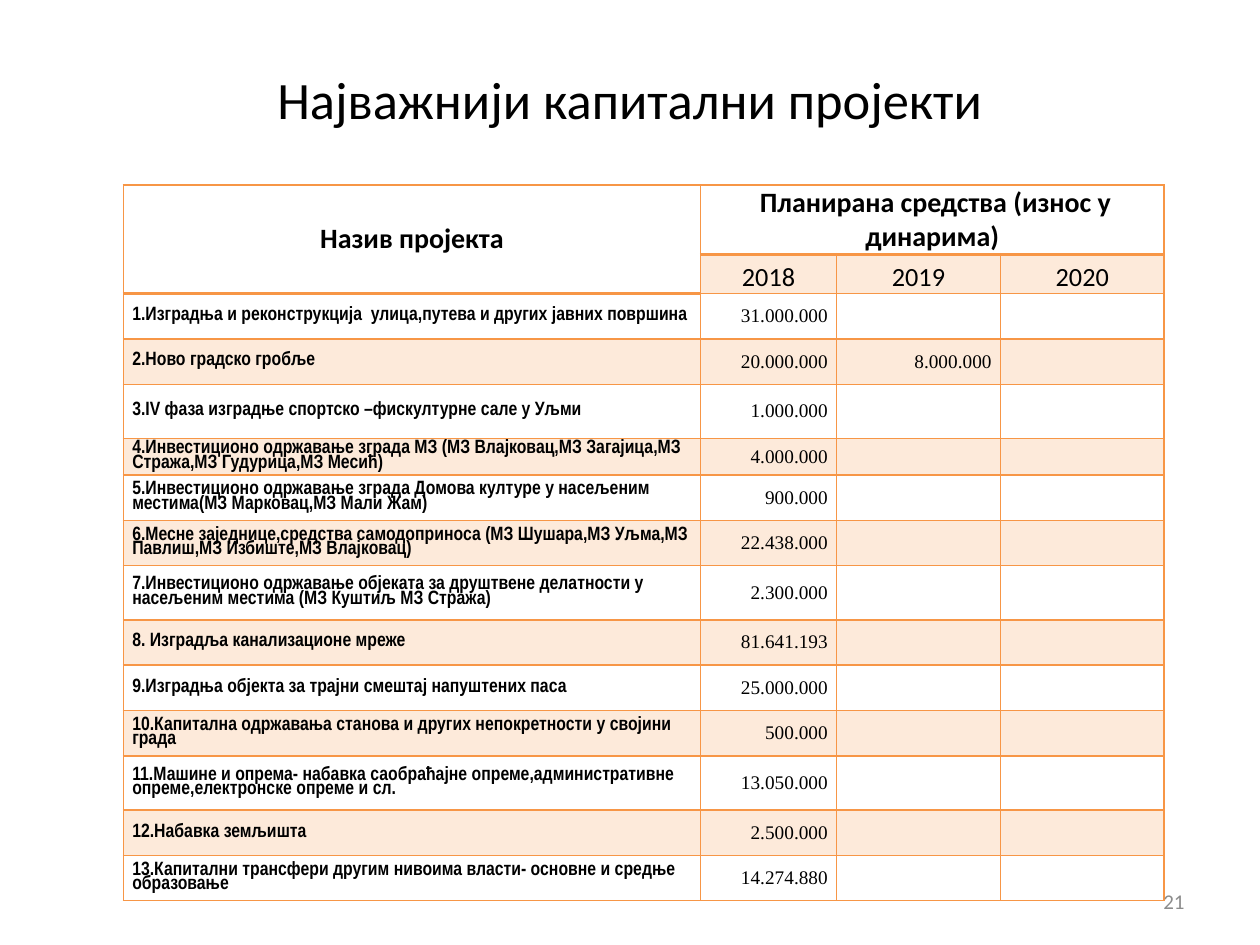
from lxml import etree
from pptx import Presentation
from pptx import util as u
from pptx.dml.color import RGBColor
from pptx.enum import text
from pptx.oxml.ns import qn

ORANGE = "F79646"
BLACK = "000000"
LEFT, MID, RIGHT = text.PP_ALIGN.LEFT, text.PP_ALIGN.CENTER, text.PP_ALIGN.RIGHT

YEARS = ["2018", "2019", "2020"]
ITEMS = [  # name, row height, sums by year
    ("1.Изградња и реконструкција  улица,путева и других јавних површина", 0.36, "31.000.000"),
    ("2.Ново градско гробље", 0.36, "20.000.000", "8.000.000"),
    ("3.IV фаза изградње спортско –фискултурне сале у Уљми", 0.43, "1.000.000"),
    ("4.Инвестиционо одржавање зграда МЗ (МЗ Влајковац,МЗ Загајица,МЗ Стража,МЗ Гудурица,МЗ Месић)",
     0.29, "4.000.000"),
    ("5.Инвестиционо одржавање зграда Домова културе у насељеним местима(МЗ Марковац,МЗ Мали Жам)",
     0.36, "900.000"),
    ("6.Месне заједнице,средства самодоприноса (МЗ Шушара,МЗ Уљма,МЗ Павлиш,МЗ Избиште,МЗ Влајковац)",
     0.36, "22.438.000"),
    ("7.Инвестиционо одржавање објеката за друштвене делатности у насељеним местима (МЗ Куштиљ МЗ Стража)",
     0.43, "2.300.000"),
    ("8. Изградља канализационе мреже", 0.36, "81.641.193"),
    ("9.Изградња објекта за трајни смештај напуштених паса", 0.36, "25.000.000"),
    ("10.Капитална одржавања станова и других непокретности у својини града", 0.36, "500.000"),
    ("11.Машине и опрема- набавка саобраћајне опреме,административне опреме,електронске опреме и сл.",
     0.43, "13.050.000"),
    ("12.Набавка земљишта", 0.36, "2.500.000"),
    ("13.Капитални трансфери другим нивоима власти- основне и средње образовање", 0.36, "14.274.880"),
]


def color(code):
    return RGBColor.from_string(code)


class Deck:
    """Holds the style and the current slide."""

    face = "Calibri"

    def __init__(self, wide, high):
        self.prs = Presentation()
        self.prs.slide_width, self.prs.slide_height = u.Inches(wide), u.Inches(high)
        self.slide = self.prs.slides.add_slide(self.prs.slide_layouts[6])

    def put(self, frame, words, size, align, face=None, bold=False, tone=BLACK, gap=None):
        para = frame.paragraphs[0]
        para.text = words
        para.alignment = align
        para.line_spacing = gap
        font = para.font
        font.name, font.size, font.bold = face or self.face, u.Pt(size), bold
        font.color.rgb = color(tone)

    def label(self, box, words, size, align, tone=BLACK):
        frame = self.slide.shapes.add_textbox(*map(u.Inches, box)).text_frame
        frame.word_wrap = True
        frame.vertical_anchor = text.MSO_ANCHOR.MIDDLE
        self.put(frame, words, size, align, tone=tone)

    def table(self, left, top, cols, rows):
        place = [u.Inches(n) for n in (left, top, sum(cols), sum(rows))]
        grid = self.slide.shapes.add_table(len(rows), len(cols), *place).table
        grid.first_row = grid.horz_banding = False
        for col, wide in zip(grid.columns, cols):
            col.width = u.Inches(wide)
        for row, high in zip(grid.rows, rows):
            row.height = u.Inches(high)
        return grid

    def cell(self, cell, words, size, align, tint=False, base=1, low=False, **style):
        cell.margin_left = cell.margin_right = u.Inches(0.07)
        cell.margin_top = cell.margin_bottom = 0
        cell.vertical_anchor = text.MSO_ANCHOR.BOTTOM if low else text.MSO_ANCHOR.MIDDLE
        self.edge(cell, base)
        self.paint(cell, tint)
        self.put(cell.text_frame, words, size, align, **style)

    def edge(self, cell, base):
        prop = cell._tc.get_or_add_tcPr()
        for side, width in (("L", 1), ("R", 1), ("T", 1), ("B", base)):
            line = etree.SubElement(prop, qn("a:ln" + side), w=str(u.Pt(width)))
            fill = etree.SubElement(line, qn("a:solidFill"))
            etree.SubElement(fill, qn("a:srgbClr"), val=ORANGE)

    def paint(self, cell, tint):
        if not tint:
            cell.fill.background()
            return
        cell.fill.solid()
        cell.fill.fore_color.rgb = color(ORANGE)
        tone = cell._tc.tcPr.find(qn("a:solidFill")).find(qn("a:srgbClr"))
        etree.SubElement(tone, qn("a:alpha"), val="20000")


def main():
    deck = Deck(10, 7.5)

    # Table grid
    grid = deck.table(0.98, 1.47, [4.58, 1.08, 1.3, 1.3],
                      [0.55, 0.31] + [item[1] for item in ITEMS])

    # Head rows
    heads = ["Назив пројекта", " Планирана средства (износ у динарима)", "", ""]
    for c, words in enumerate(heads):
        deck.cell(grid.cell(0, c), words, 16, MID, base=2, low=c > 0, bold=True)
    for c, words in enumerate([""] + YEARS):
        deck.cell(grid.cell(1, c), words, 15, MID, tint=c > 0,
                  base=1 if c else 2, low=True)
    grid.cell(0, 0).merge(grid.cell(1, 0))
    grid.cell(0, 1).merge(grid.cell(0, 3))

    # Project rows
    for r, (name, _, *sums) in enumerate(ITEMS, 2):
        tint = r % 2 == 1
        deck.cell(grid.cell(r, 0), name, 11, LEFT, tint,
                  face="Arial Narrow", bold=True, gap=0.8)
        for c in range(len(YEARS)):
            words = sums[c] if c < len(sums) else ""
            deck.cell(grid.cell(r, c + 1), words, 11, RIGHT, tint, face="Times New Roman")

    # Page number and title
    deck.label((7.17, 6.95, 2.33, 0.4), "21", 12, RIGHT, "8C8C8C")
    deck.label((0.5, 0.3, 9, 0.96), "Најважнији капитални пројекти", 30, MID)

    deck.prs.save("out.pptx")


if __name__ == "__main__":
    main()
